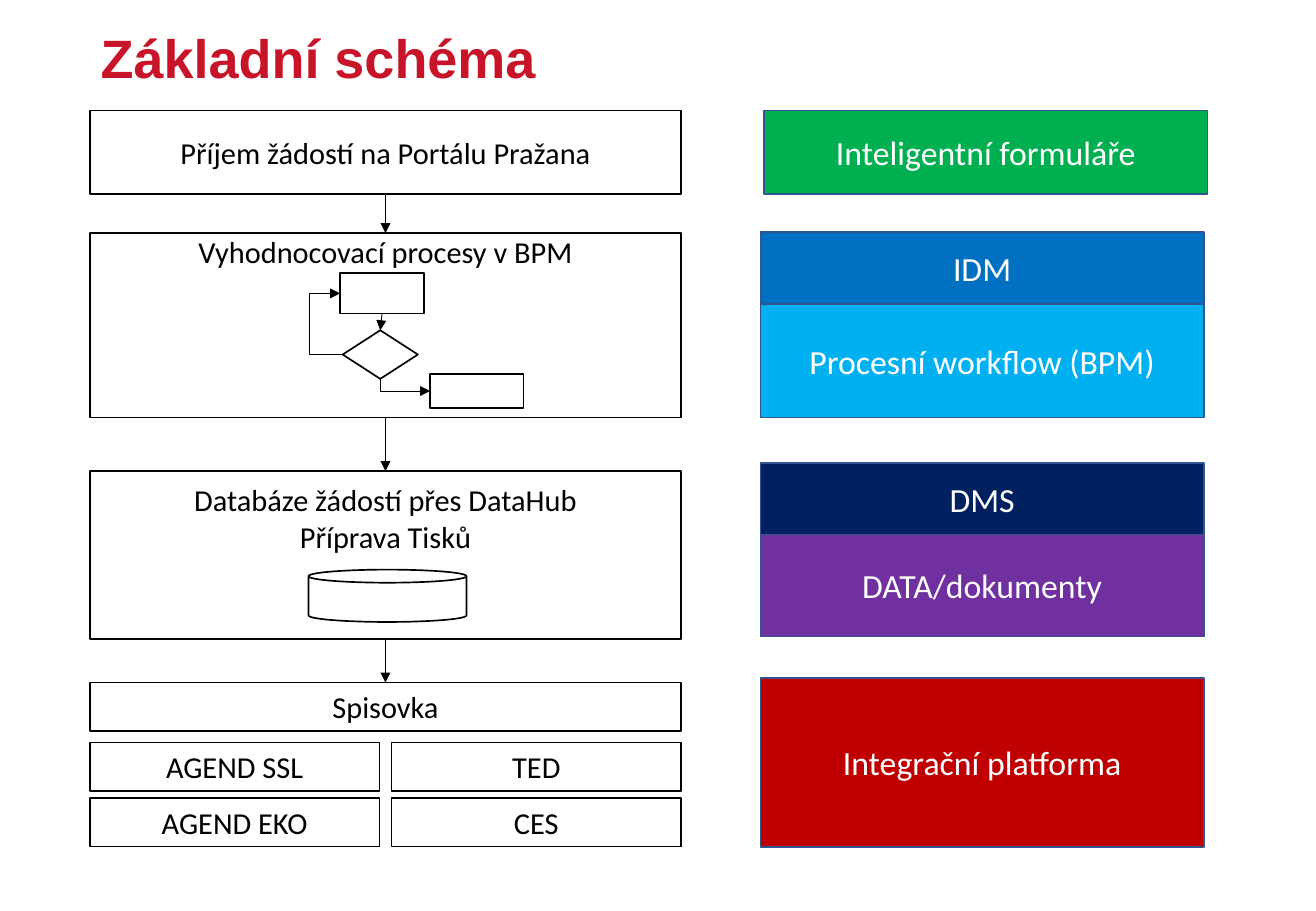
from lxml import etree
from pptx import Presentation
from pptx import util as u
from pptx.dml.color import RGBColor
from pptx.enum import shapes, text
from pptx.oxml import ns

COLORS = {
    "title": "C81428", "black": "000000", "white": "FFFFFF", "border": "325491",
    "green": "00B050", "blue": "0070C0", "sky": "00B0F0",
    "navy": "002060", "purple": "7030A0", "red": "C00000",
}
KIND = shapes.MSO_SHAPE
TOP, LEFT, BOTTOM = 0, 1, 2


def color(name):
    return RGBColor.from_string(COLORS[name])


def format_text(frame, size, name, font="Calibri", bold=False):
    for paragraph in frame.paragraphs:
        for run in paragraph.runs:
            run.font.name = font
            run.font.size = u.Pt(size)
            run.font.bold = bold
            run.font.color.rgb = color(name)


def add_box(slide, x, y, width, height, label="", kind=KIND.RECTANGLE,
            fill=None, line="black", size=18, font_color="black", top_inset=None):
    shape = slide.shapes.add_shape(kind, u.Pt(x), u.Pt(y), u.Pt(width), u.Pt(height))
    shape.shadow.inherit = False
    if fill:
        shape.fill.solid()
        shape.fill.fore_color.rgb = color(fill)
    else:
        shape.fill.background()
    shape.line.color.rgb = color(line)
    shape.line.width = u.Pt(1)
    frame = shape.text_frame
    frame.word_wrap = True
    frame.vertical_anchor = text.MSO_ANCHOR.MIDDLE
    if top_inset is not None:
        frame.vertical_anchor = text.MSO_ANCHOR.TOP
        frame.margin_top = u.Pt(top_inset)
    if label:
        frame.text = label
        for paragraph in frame.paragraphs:
            paragraph.alignment = text.PP_ALIGN.CENTER
        format_text(frame, size, font_color)
    return shape


def add_arrow(slide, start, start_side, end, end_side, width=1,
              kind=shapes.MSO_CONNECTOR.STRAIGHT):
    connector = slide.shapes.add_connector(kind, 0, 0, 0, 0)
    connector.begin_connect(start, start_side)
    connector.end_connect(end, end_side)
    connector.line.color.rgb = color("black")
    connector.line.width = u.Pt(width)
    etree.SubElement(connector.line._get_or_add_ln(), ns.qn("a:tailEnd"), type="triangle")
    etree.SubElement(connector._element.spPr, ns.qn("a:effectLst"))
    return connector


def bend_around(connector, lead):
    geometry = connector._element.spPr.find(ns.qn("a:prstGeom"))
    guides = geometry.find(ns.qn("a:avLst"))
    ratio = round(100000 * u.Pt(lead) / connector.width)
    etree.SubElement(guides, ns.qn("a:gd"), name="adj1", fmla=f"val {ratio}")


def bend_down_then_right(connector):
    across, down = connector.width, connector.height
    center_x = connector.left + across // 2
    center_y = connector.top + down // 2
    connector.left, connector.top = center_x - down // 2, center_y - across // 2
    connector.width, connector.height = down, across
    properties = connector._element.spPr
    properties.find(ns.qn("a:prstGeom")).set("prst", "bentConnector2")
    transform = properties.find(ns.qn("a:xfrm"))
    transform.set("rot", "16200000")
    transform.set("flipH", "1")


def add_title(slide, x, y, width, height):
    frame = slide.shapes.add_textbox(u.Pt(x), u.Pt(y), u.Pt(width), u.Pt(height)).text_frame
    frame.word_wrap = True
    frame.vertical_anchor = text.MSO_ANCHOR.MIDDLE
    frame.text = "Základní schéma"
    frame.paragraphs[0].line_spacing = 0.9
    format_text(frame, 32, "title", "Arial", True)


def add_decision_loop(slide, x, y):
    step = add_box(slide, x, y, 49.7, 23.8)
    decision = add_box(slide, x + 1.5, y + 33.8, 44.6, 28.8, kind=KIND.DIAMOND)
    outcome = add_box(slide, x + 53.3, y + 59.7, 55.4, 20.2)
    elbow = shapes.MSO_CONNECTOR.ELBOW
    add_arrow(slide, step, BOTTOM, decision, TOP, 0.5)
    bend_around(add_arrow(slide, decision, LEFT, step, LEFT, 0.5, elbow), 19.4)
    bend_down_then_right(add_arrow(slide, decision, BOTTOM, outcome, LEFT, 0.5, elbow))


def add_process_flow(slide, x, y, width):
    stages = [
        (0, 49.7, "Příjem žádostí na Portálu Pražana", None),
        (72.7, 109.4, "Vyhodnocovací procesy v BPM", 0),
        (213.8, 99.4, "Databáze žádostí přes DataHub\nPříprava Tisků", 6),
        (339.1, 28.8, "Spisovka", None),
    ]
    boxes = [add_box(slide, x, y + offset, width, height, label, top_inset=inset)
             for offset, height, label, inset in stages]
    for start, end in zip(boxes, boxes[1:]):
        add_arrow(slide, start, BOTTOM, end, TOP)

    add_decision_loop(slide, x + 148.3, y + 96.5)
    add_box(slide, x + 129.6, y + 272.2, 93.6, 31, kind=KIND.CAN)

    gap = 7.2
    system_width = (width - gap) / 2
    systems = [["AGEND SSL", "TED"], ["AGEND EKO", "CES"]]
    for row, labels in enumerate(systems):
        for column, label in enumerate(labels):
            add_box(slide, x + column * (system_width + gap), y + 374.6 + row * 33,
                    system_width, 28.8, label)


def add_platform_column(slide, x, y, width):
    layers = [
        (2.2, 0, 49.7, "Inteligentní formuláře", "green"),
        (0, 72, 42.7, "IDM", "blue"),
        (0, 114.7, 67.4, "Procesní workflow (BPM)", "sky"),
        (0, 208.8, 42.5, "DMS", "navy"),
        (0, 251.3, 60.5, "DATA/dokumenty", "purple"),
        (0, 336.3, 100.1, "Integrační platforma", "red"),
    ]
    for indent, offset, height, label, fill in layers:
        add_box(slide, x + indent, y + offset, width, height, label,
                fill=fill, line="border", size=20, font_color="white")


def main():
    presentation = Presentation()
    presentation.slide_width = u.Pt(780)
    presentation.slide_height = u.Pt(540)
    slide = presentation.slides.add_slide(presentation.slide_layouts[6])
    add_title(slide, 52.6, 0.7, 672.5, 70.6)
    add_process_flow(slide, 53.3, 65.5, 350.4)
    add_platform_column(slide, 450.7, 65.5, 262.8)
    presentation.save("out.pptx")


if __name__ == "__main__":
    main()
